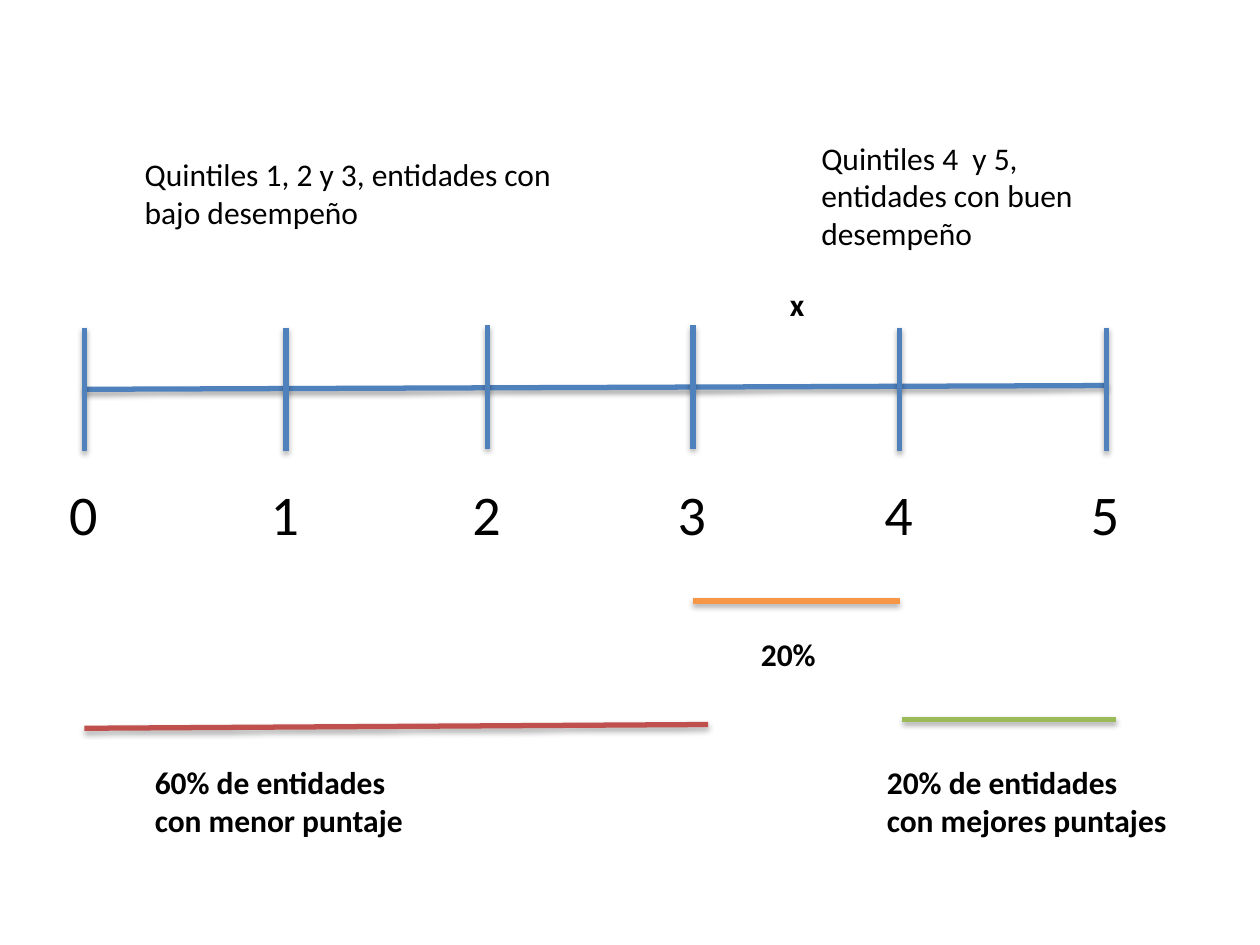
from lxml import etree
from pptx import Presentation
from pptx.dml.color import RGBColor
from pptx.enum.shapes import MSO_CONNECTOR
from pptx.enum.text import MSO_AUTO_SIZE
from pptx.oxml import parse_xml
from pptx.util import Inches, Pt

BLACK = RGBColor(0x00, 0x00, 0x00)
BLUE = RGBColor(0x4F, 0x81, 0xBD)
RED = RGBColor(0xC0, 0x50, 0x4D)
GREEN = RGBColor(0x9B, 0xBB, 0x59)
ORANGE = RGBColor(0xF7, 0x96, 0x46)

SHADOW = """<a:effectLst xmlns:a="http://schemas.openxmlformats.org/drawingml/2006/main">
  <a:outerShdw blurRad="40000" dist="23000" dir="5400000" rotWithShape="0">
    <a:srgbClr val="000000"><a:alpha val="35000"/></a:srgbClr>
  </a:outerShdw>
</a:effectLst>"""

deck = Presentation()
deck.slide_width, deck.slide_height = Inches(10), Inches(7.5)
slide = deck.slides.add_slide(deck.slide_layouts[6])


def add_line(x1, y1, x2, y2, color):
    line = slide.shapes.add_connector(
        MSO_CONNECTOR.STRAIGHT, Inches(x1), Inches(y1), Inches(x2), Inches(y2))
    line.line.color.rgb = color
    line.line.width = Pt(3)
    line._element.spPr.append(parse_xml(SHADOW))


def add_text(text, x, y, w, h, size=18, bold=False, wrap=False):
    box = slide.shapes.add_textbox(Inches(x), Inches(y), Inches(w), Inches(h))
    frame = box.text_frame
    frame.text = text
    frame.word_wrap = wrap
    frame.auto_size = MSO_AUTO_SIZE.SHAPE_TO_FIT_TEXT
    style = {"name": "Calibri", "size": Pt(size), "bold": bold}
    for para in frame.paragraphs:
        for run in para.runs:
            for key, value in style.items():
                setattr(run.font, key, value)
            run.font.color.rgb = BLACK


# Scale axis
add_line(0.66, 3.09, 8.78, 3.06, BLUE)

# Ticks and their numbers
ticks = [(0.67, 2.6), (2.27, 2.6), (3.87, 2.58),
         (5.5, 2.58), (7.14, 2.6), (8.78, 2.6)]
for num, (x, top) in enumerate(ticks):
    add_line(x, top, x, top + 0.98, BLUE)
    add_text(str(num), x - 0.22, 3.76, 0.43, 0.64, size=32)

# Marker above the scale
add_text("x", 6.17, 2.21, 0.32, 0.4, bold=True)

# Range lines with their shares
add_line(0.67, 5.78, 5.62, 5.75, RED)
add_text("60% de entidades\ncon menor puntaje", 1.13, 6.01, 2.21, 0.71, bold=True)
add_line(8.86, 5.71, 7.16, 5.71, GREEN)
add_text("20% de entidades\ncon mejores puntajes", 6.94, 6.01, 2.67, 0.71,
         bold=True, wrap=True)
add_line(7.14, 4.77, 5.5, 4.77, ORANGE)
add_text("20%", 5.94, 4.99, 0.76, 0.4, bold=True)

# Notes on the quintiles
add_text("Quintiles 4  y 5, entidades con buen desempeño",
         6.42, 1.05, 2.49, 1.01, wrap=True)
add_text("Quintiles 1, 2 y 3, entidades con bajo desempeño",
         1.05, 1.18, 3.43, 0.71, wrap=True)

deck.save("out.pptx")
